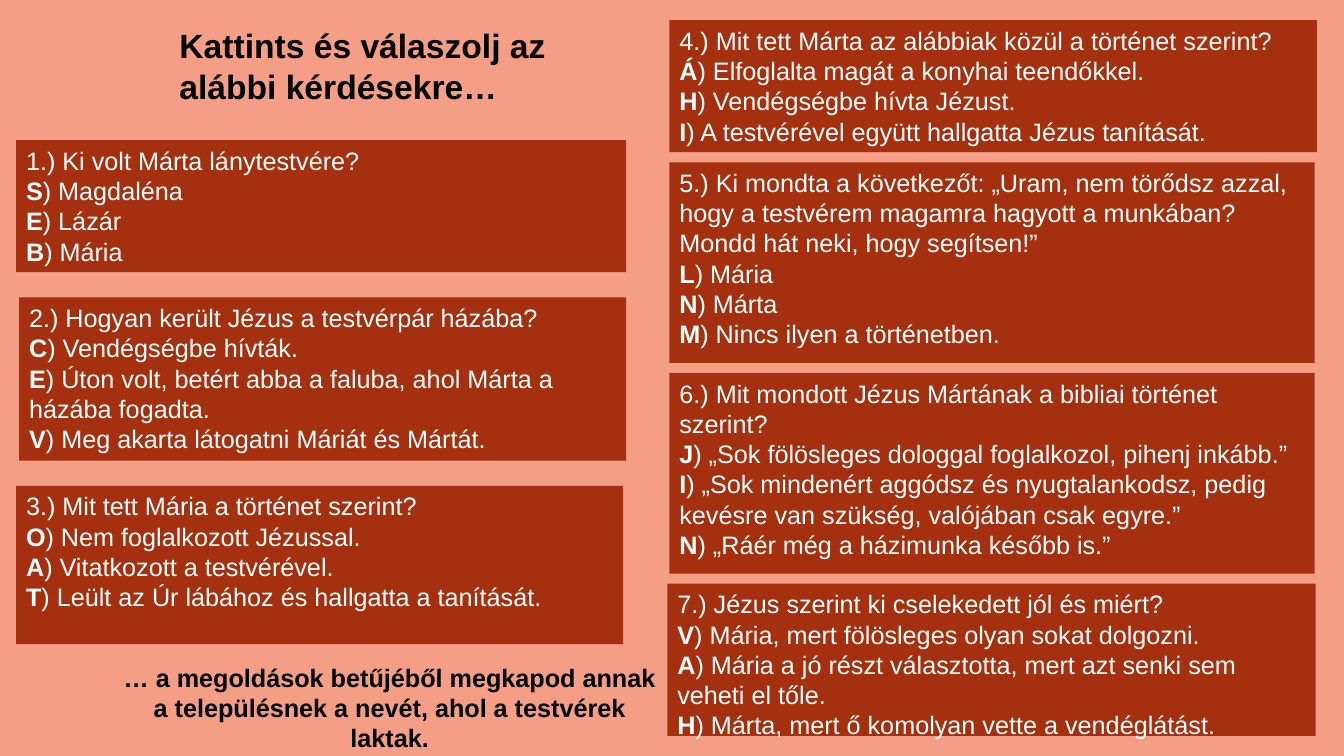
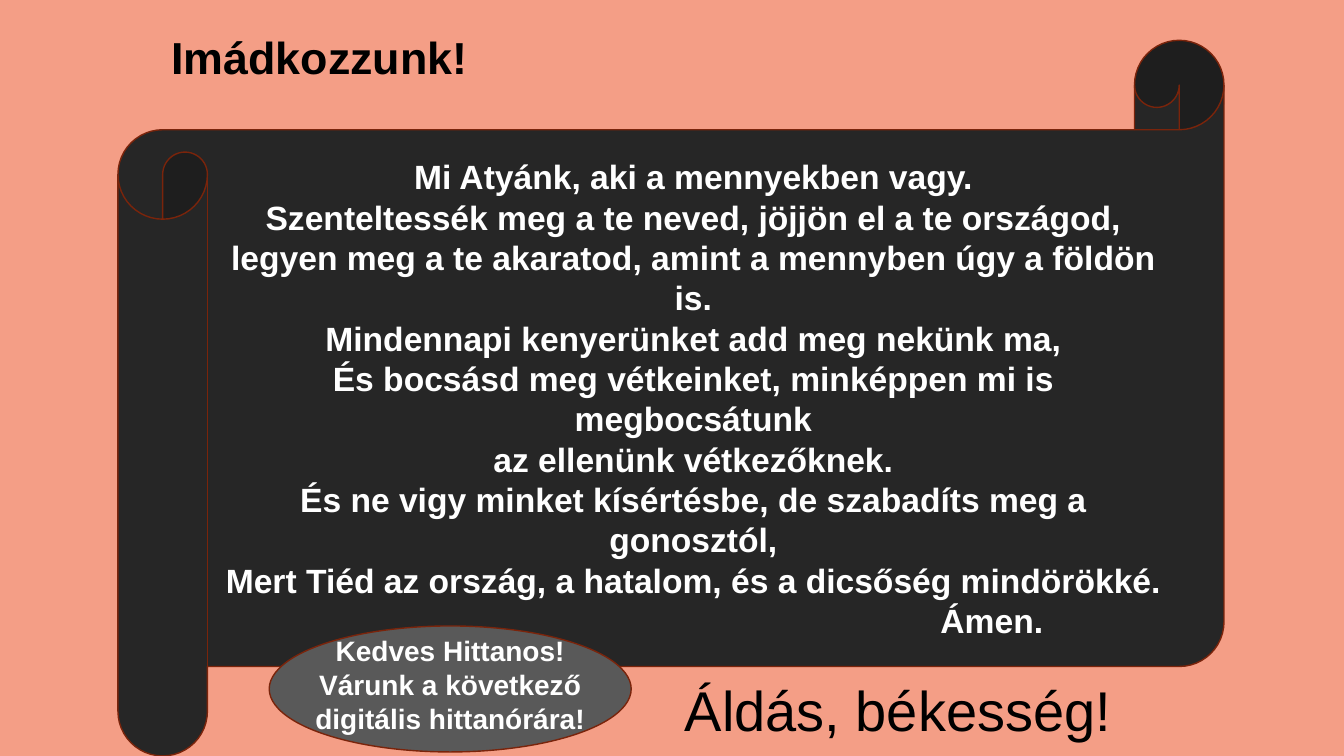
from dataclasses import dataclass

from pptx import Presentation
from pptx.dml.color import RGBColor
from pptx.enum.shapes import MSO_SHAPE as Shape
from pptx.enum.text import MSO_ANCHOR as Anchor, MSO_AUTO_SIZE as AutoSize, PP_ALIGN as Align
from pptx.util import Emu, Pt


# Shared look: colours and type sizes
@dataclass(frozen=True)
class Theme:
    font: str = "Arial"
    background: str = "F49E86"
    panel: str = "A5300F"
    outline: str = "7A240B"
    scroll: str = "262626"
    badge: str = "595959"
    dark: str = "000000"
    light: str = "FFFFFF"
    body: int = 18
    note: int = 20
    heading: int = 24
    large_heading: int = 32
    farewell: int = 40


THEME = Theme()
EMU_PER_PX = 9144  # 100 px to the inch
PAGE_SIZE = (1333, 750)
TITLE_ONLY = 5

# Quiz: each panel is left, width, height, question, answers
LEFT_TOP, LEFT_GAP = 139, 25
LEFT_PANELS = [
    (16, 605, 131, "1.) Ki volt Márta lánytestvére?",
     ["S) Magdaléna", "E) Lázár", "B) Mária"]),
    (19, 602, 162, "2.) Hogyan került Jézus a testvérpár házába?",
     ["C) Vendégségbe hívták.",
      "E) Úton volt, betért abba a faluba, ahol Márta a házába fogadta.",
      "V) Meg akarta látogatni Máriát és Mártát."]),
    (16, 602, 157, "3.) Mit tett Mária a történet szerint?",
     ["O) Nem foglalkozott Jézussal.",
      "A) Vitatkozott a testvérével.",
      "T) Leült az Úr lábához és hallgatta a tanítását."]),
]
RIGHT_TOP, RIGHT_GAP = 20, 10
RIGHT_PANELS = [
    (664, 642, 131, "4.) Mit tett Márta az alábbiak közül a történet szerint?",
     ["Á) Elfoglalta magát a konyhai teendőkkel.",
      "H) Vendégségbe hívta Jézust.",
      "I) A testvérével együtt hallgatta Jézus tanítását."]),
    (664, 640, 199, "5.) Ki mondta a következőt: „Uram, nem törődsz azzal, hogy a "
     "testvérem magamra hagyott a munkában? Mondd hát neki, hogy segítsen!”",
     ["L) Mária", "N) Márta", "M) Nincs ilyen a történetben."]),
    (664, 640, 199, "6.) Mit mondott Jézus Mártának a bibliai történet szerint?",
     ["J) „Sok fölösleges dologgal foglalkozol, pihenj inkább.”",
      "I) „Sok mindenért aggódsz és nyugtalankodsz, pedig kevésre van szükség, "
      "valójában csak egyre.”",
      "N) „Ráér még a házimunka később is.”"]),
    (662, 643, 151, "7.) Jézus szerint ki cselekedett jól és miért?",
     ["V) Mária, mert fölösleges olyan sokat dolgozni.",
      "A) Mária a jó részt választotta, mert azt senki sem veheti el tőle.",
      "H) Márta, mert ő komolyan vette a vendéglátást."]),
]

PRAYER = [
    "Mi Atyánk, aki a mennyekben vagy.",
    "Szenteltessék meg a te neved, jöjjön el a te országod,",
    "legyen meg a te akaratod, amint a mennyben úgy a földön is.",
    "Mindennapi kenyerünket add meg nekünk ma,",
    "És bocsásd meg vétkeinket, minképpen mi is megbocsátunk",
    "az ellenünk vétkezőknek.",
    "És ne vigy minket kísértésbe, de szabadíts meg a gonosztól,",
    "Mert Tiéd az ország, a hatalom, és a dicsőség mindörökké.",
    "Ámen.",
]
AMEN_INDENT = 592


def px(length):
    return Emu(length * EMU_PER_PX)


def rgb(value):
    return RGBColor.from_string(value)


# Text
def add_span(para, text, size, color, bold=False):
    span = para.add_run()
    span.text = text
    for name, value in {"name": THEME.font, "size": Pt(size), "bold": bold}.items():
        setattr(span.font, name, value)
    span.font.color.rgb = rgb(color)


def write(box, lines, size, color, align=Align.LEFT, anchor=Anchor.TOP):
    """Fill a box; each line is a list of (text, bold) spans."""
    frame = box.text_frame
    settings = {"word_wrap": True, "auto_size": AutoSize.NONE, "vertical_anchor": anchor}
    for name, value in settings.items():
        setattr(frame, name, value)
    for index, spans in enumerate(lines):
        para = frame.add_paragraph() if index else frame.paragraphs[0]
        para.alignment = align
        for text, bold in spans:
            add_span(para, text, size, color, bold)


def add_text(page, area, lines, size, color, bold=True):
    box = page.shapes.add_textbox(*map(px, area))
    write(box, [[(line, bold)] for line in lines], size, color, Align.CENTER)


# Shapes
def add_figure(page, kind, area, fill, outline=None):
    figure = page.shapes.add_shape(kind, *map(px, area))
    figure.shadow.inherit = False
    figure.fill.solid()
    figure.fill.fore_color.rgb = rgb(fill)
    if outline:
        figure.line.color.rgb = rgb(outline)
        figure.line.width = Pt(1)
    else:
        figure.line.fill.background()
    return figure


def add_panel_stack(page, top, gap, panels):
    for left, width, height, question, answers in panels:
        lines = [[(question, False)]]
        for answer in answers:
            letter, bracket, rest = answer.partition(")")
            lines.append([(letter, True), (bracket + rest, False)])
        panel = add_figure(page, Shape.RECTANGLE, (left, top, width, height), THEME.panel)
        write(panel, lines, THEME.body, THEME.light)
        top += height + gap


# Pages
def add_page(deck, title, area, size, align=Align.LEFT):
    page = deck.slides.add_slide(deck.slide_layouts[TITLE_ONLY])
    heading = page.shapes.title
    for name, length in zip(("left", "top", "width", "height"), area):
        setattr(heading, name, px(length))
    write(heading, [[(title, True)]], size, THEME.dark, align)
    return page


def build_quiz(deck):
    page = add_page(deck, "Kattints és válaszolj az alábbi kérdésekre…",
                    (168, 20, 453, 91), THEME.heading)
    add_panel_stack(page, LEFT_TOP, LEFT_GAP, LEFT_PANELS)
    add_panel_stack(page, RIGHT_TOP, RIGHT_GAP, RIGHT_PANELS)
    add_text(page, (112, 652, 549, 101),
             ["… a megoldások betűjéből megkapod annak a településnek a nevét, "
              "ahol a testvérek laktak."], THEME.body, THEME.dark)


def build_prayer(deck):
    page = add_page(deck, "Imádkozzunk!", (120, 24, 394, 61),
                    THEME.large_heading, Align.CENTER)
    scroll = add_figure(page, Shape.HORIZONTAL_SCROLL, (117, 40, 1097, 710),
                        THEME.scroll, THEME.outline)
    write(scroll, [[(line, True)] for line in PRAYER], THEME.heading, THEME.light,
          Align.CENTER, Anchor.MIDDLE)
    # The closing word sits to the right, centred behind a left indent
    amen = scroll.text_frame.paragraphs[-1]
    amen._p.get_or_add_pPr().set("marL", str(px(AMEN_INDENT)))

    add_figure(page, Shape.OVAL, (267, 621, 359, 125), THEME.badge, THEME.outline)
    add_text(page, (267, 624, 359, 111),
             ["Kedves Hittanos!", "Várunk a következő digitális hittanórára!"],
             THEME.note, THEME.light)
    add_text(page, (557, 665, 667, 77), ["Áldás, békesség!"],
             THEME.farewell, THEME.dark, bold=False)


def main():
    deck = Presentation()
    deck.slide_width, deck.slide_height = map(px, PAGE_SIZE)
    backdrop = deck.slide_master.background.fill
    backdrop.solid()
    backdrop.fore_color.rgb = rgb(THEME.background)
    build_quiz(deck)
    build_prayer(deck)
    deck.save("out.pptx")


if __name__ == "__main__":
    main()
